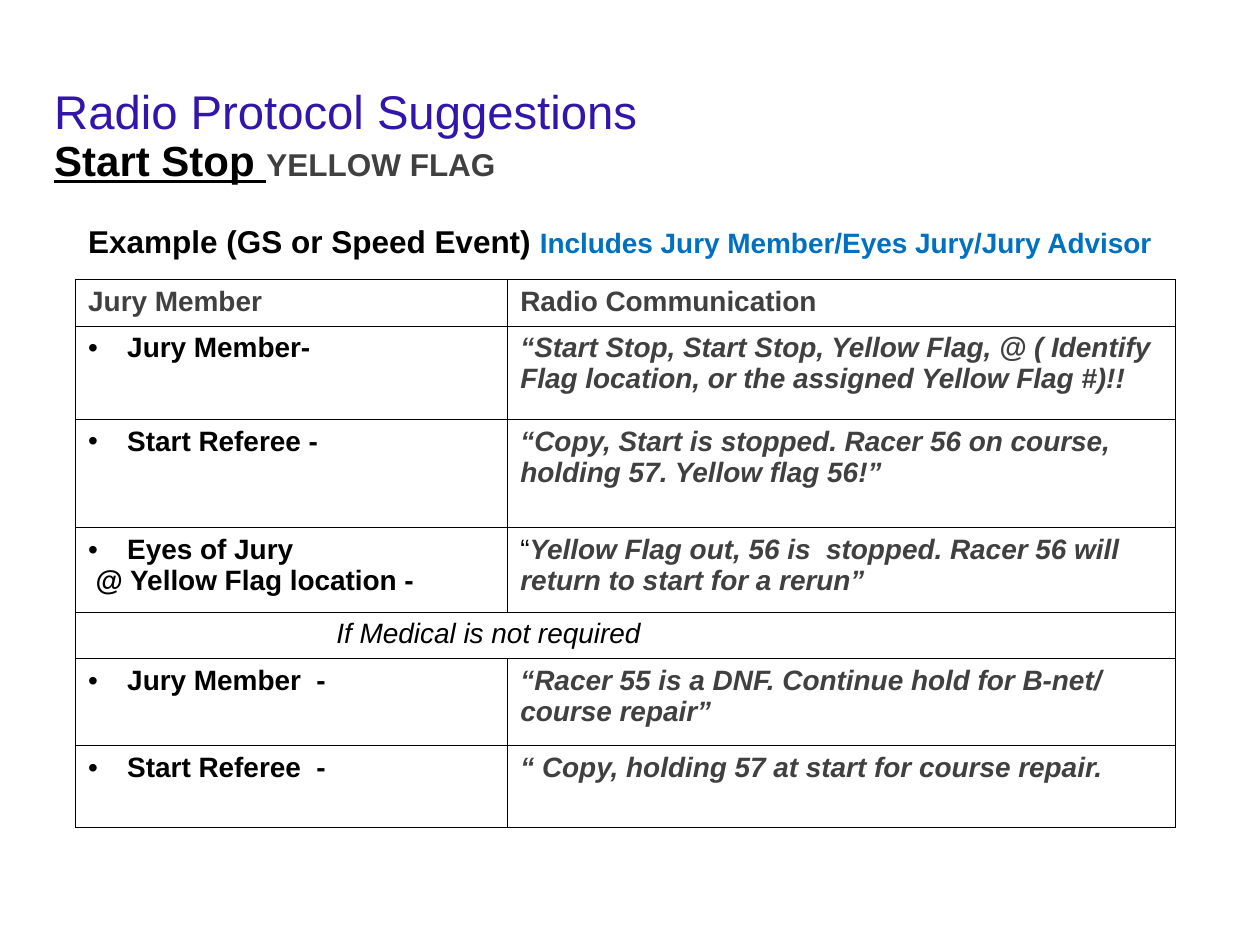
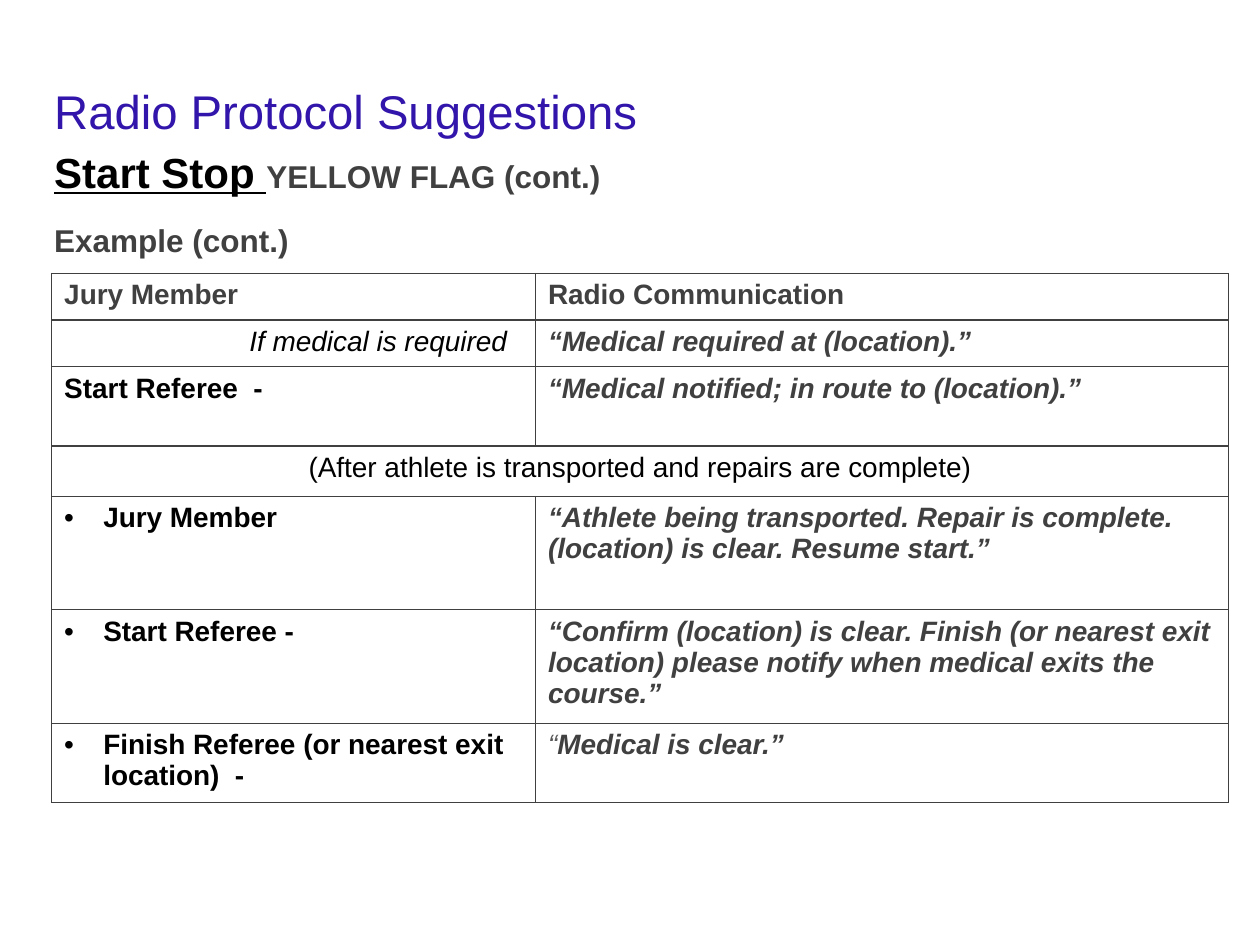
from lxml.etree import SubElement
from pptx import Presentation
from pptx.dml.color import RGBColor
from pptx.enum.text import MSO_ANCHOR as ANCHOR, MSO_AUTO_SIZE as AUTO, PP_ALIGN as ALIGN
from pptx.oxml.ns import qn
from pptx.util import Inches, Pt

# Shared style
FONT = "Arial"
VIOLET, BLACK, GREY, MID_GREY, BLUE = "3215AB", "000000", "404040", "595959", "0070C0"
BULLET_INDENT = 0.31
BODY_INDENT = 0.27


def color(value):
    return RGBColor.from_string(value)


def add_text(p, text, size=16, fill=BLACK, bold=False, italic=False, underline=False):
    r = p.add_run()
    r.text = text
    f = r.font
    f.name, f.size, f.color.rgb = FONT, Pt(size), color(fill)
    f.bold, f.italic, f.underline = bold, italic, underline


def set_indent(p, left=0, first=0, bullet=None):
    pPr = p._p.get_or_add_pPr()
    pPr.set("marL", str(Inches(left)))
    pPr.set("indent", str(Inches(first)))
    if bullet:
        SubElement(pPr, qn("a:buFont"), typeface=FONT)
        SubElement(pPr, qn("a:buChar"), char=bullet)
    else:
        SubElement(pPr, qn("a:buNone"))


# Cell content: a cell is a list of paragraphs, each (runs, layout)
def run(text, **fmt):
    return text, fmt


def header(text):
    return [([run(text, fill=GREY, bold=True)], {})]


def label(text):
    return [([run(text, bold=True)], {})]


def speaker(text, extra=None):
    paras = [([run(text, bold=True)],
              dict(left=BULLET_INDENT, first=-BULLET_INDENT, bullet="•"))]
    if extra:
        paras.append(([run(extra, bold=True)], dict(left=0.06)))
    return paras


def quote(text, opening=None):
    spoken = run(text, fill=GREY, bold=True, italic=True)
    return [([opening, spoken] if opening else [spoken], {})]


def note(text, italic=True, **layout):
    return [([run(text, italic=italic)], layout)]


class Deck:
    def __init__(self):
        self.prs = Presentation()
        self.prs.slide_width, self.prs.slide_height = Inches(10), Inches(7.5)
        self.s = None

    def new_slide(self):
        self.s = self.prs.slides.add_slide(self.prs.slide_layouts[1])

    def place(self, sp, left, top, width, height, anchor):
        sp.left, sp.top = Inches(left), Inches(top)
        sp.width, sp.height = Inches(width), Inches(height)
        tf = sp.text_frame
        tf.word_wrap, tf.auto_size, tf.vertical_anchor = True, AUTO.NONE, anchor
        return tf

    def title(self, text):
        tf = self.place(self.s.shapes.title, 0.33, 0.19, 8.5, 0.97, ANCHOR.BOTTOM)
        p = tf.paragraphs[0]
        p.alignment, p.line_spacing = ALIGN.LEFT, 0.9
        add_text(p, text, size=27, fill=VIOLET)

    def body(self, top, height, paras, gap, lead=-BODY_INDENT):
        """Lines under the title; lead is the first-line indent after line one."""
        tf = self.place(self.s.placeholders[1], 0.33, top, 9.5, height, ANCHOR.TOP)
        tf.margin_top = Inches(0.08)
        for i, runs in enumerate(paras):
            p = tf.add_paragraph() if i else tf.paragraphs[0]
            p.space_before = Pt(gap if i else 0)
            set_indent(p, BODY_INDENT, lead if i else -BODY_INDENT)
            for text, fmt in runs:
                add_text(p, text, **fmt)

    def border(self, cell, line_color, width):
        tcPr = cell._tc.get_or_add_tcPr()
        for side in ("lnL", "lnR", "lnT", "lnB"):
            ln = SubElement(tcPr, qn(f"a:{side}"), w=str(Pt(width)))
            fill = SubElement(ln, qn("a:solidFill"))
            SubElement(fill, qn("a:srgbClr"), val=line_color)

    def fill_cell(self, cell, paras):
        tf = cell.text_frame
        for i, (runs, layout) in enumerate(paras):
            p = tf.add_paragraph() if i else tf.paragraphs[0]
            layout = dict(layout)
            p.alignment = layout.pop("align", ALIGN.LEFT)
            set_indent(p, **layout)
            for text, fmt in runs:
                add_text(p, text, **fmt)

    def table(self, left, top, cols, heights, rows, line_color, line_width):
        """A row with a single cell spans the whole width."""
        tbl = self.s.shapes.add_table(
            len(rows), len(cols), Inches(left), Inches(top),
            Inches(sum(cols)), Inches(sum(heights))).table
        tbl.first_row = tbl.horz_banding = False
        for col, width in zip(tbl.columns, cols):
            col.width = Inches(width)
        for i, (height, row) in enumerate(zip(heights, rows)):
            tbl.rows[i].height = Inches(height)
            for j in range(len(cols)):
                self.border(tbl.cell(i, j), line_color, line_width)
                tbl.cell(i, j).fill.background()
            if len(row) < len(cols):
                tbl.cell(i, 0).merge(tbl.cell(i, len(cols) - 1))
            for j, paras in enumerate(row):
                self.fill_cell(tbl.cell(i, j), paras)


TITLE = "Radio Protocol Suggestions"
START_STOP = run("Start Stop ", size=24, bold=True, underline=True)
HEADER_ROW = [header("Jury Member"), header("Radio Communication")]


def subhead(text, fill=GREY):
    return run(text, size=18, fill=fill, bold=True)


def yellow_flag(deck):
    deck.new_slide()
    deck.title(TITLE)
    deck.body(0.99, 6.28, [
        [START_STOP, subhead("YELLOW FLAG")],
        [subhead("Example (GS or Speed Event) ", BLACK),
         run("Includes Jury Member/Eyes Jury/Jury Advisor", fill=BLUE, bold=True)],
    ], gap=21, lead=0)
    deck.s.placeholders[1].text_frame.paragraphs[1]._p.pPr.set("marL", str(Inches(0.27)))
    deck.table(0.6, 2.22, [3.43, 5.3], [0.37, 0.74, 0.86, 0.67, 0.37, 0.69, 0.65], [
        HEADER_ROW,
        [speaker("Jury Member-"),
         quote("“Start Stop, Start Stop, Yellow Flag, @ ( Identify Flag location, "
               "or the assigned Yellow Flag #)!!")],
        [speaker("Start Referee -"),
         quote("“Copy, Start is stopped. Racer 56 on course, holding 57. Yellow flag 56!”")],
        [speaker("Eyes of Jury", "@ Yellow Flag location -"),
         quote("Yellow Flag out, 56 is  stopped. Racer 56 will return to start for a rerun”",
               opening=run("“"))],
        [note("If Medical is not required", left=1.97)],
        [speaker("Jury Member  -"),
         quote("“Racer 55 is a DNF. Continue hold for B-net/ course repair”")],
        [speaker("Start Referee  -"),
         quote("“ Copy, holding 57 at start for course repair.")],
    ], BLACK, 0.5)


def yellow_flag_cont(deck):
    deck.new_slide()
    deck.title(TITLE)
    deck.body(1.08, 5.82, [
        [START_STOP, subhead("YELLOW FLAG (cont.)")],
        [subhead("Example (cont.)")],
    ], gap=14)
    deck.table(0.41, 2.17, [3.84, 5.5], [0.37, 0.37, 0.63, 0.4, 0.9, 0.9, 0.63], [
        HEADER_ROW,
        [note("If medical is required", left=1.47),
         quote("“Medical required at (location).”")],
        [label("Start Referee  -"),
         quote("“Medical notified; in route to (location).”")],
        [note("(After athlete is transported and repairs are complete)",
              italic=False, align=ALIGN.CENTER)],
        [speaker("Jury Member"),
         quote("“Athlete being transported. Repair is complete. (location) is clear. "
               "Resume start.”")],
        [speaker("Start Referee -"),
         quote("“Confirm (location) is clear. Finish (or nearest exit location) "
               "please notify when medical exits the course.”")],
        [speaker("Finish Referee (or nearest exit location)  -"),
         quote("Medical is clear.”", opening=run("“", fill=MID_GREY, italic=True))],
    ], GREY, 0.75)


def main():
    deck = Deck()
    yellow_flag(deck)
    yellow_flag_cont(deck)
    deck.prs.save("out.pptx")


if __name__ == "__main__":
    main()
